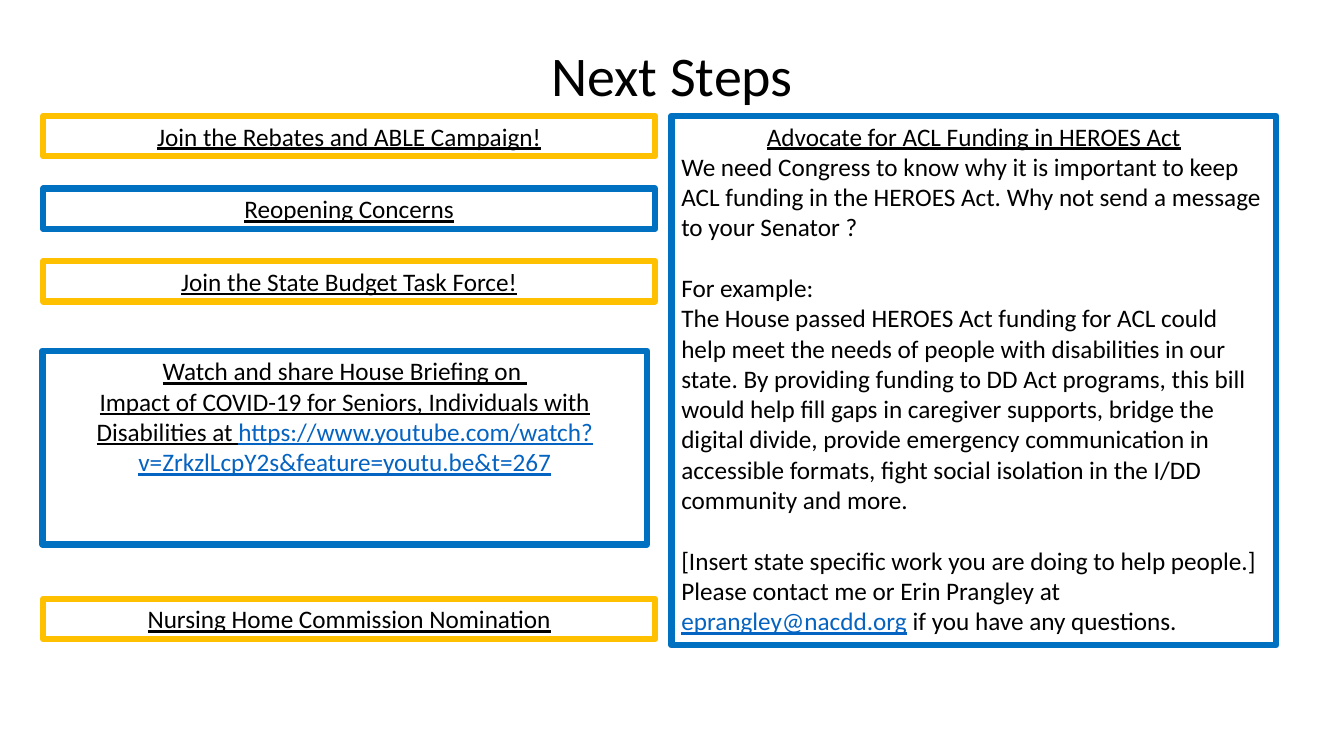
from pptx import Presentation
from pptx.dml.color import RGBColor
from pptx.enum.text import MSO_ANCHOR, PP_ALIGN
from pptx.util import Cm, Pt

COLORS = {"text": "000000", "link": "0563C1", "blue": "0070C0", "gold": "FFC000"}
FONT = "Calibri"
BODY_SIZE = 18
LINE_HEIGHT = Pt(22)


def add_span(para, text, size=BODY_SIZE, color="text", underline=False):
    span = para.add_run()
    span.text = text
    span.font.name = FONT
    span.font.size = Pt(size)
    span.font.underline = underline
    span.font.color.rgb = RGBColor.from_string(COLORS[color])


def add_frame(page, box, color):
    """Add an outlined text box and return its text frame."""
    shape = page.shapes.add_textbox(*(Cm(length) for length in box))
    shape.line.color.rgb = RGBColor.from_string(COLORS[color])
    shape.line.width = Pt(4.5)
    shape.text_frame.word_wrap = True
    return shape.text_frame


def add_heading(frame, text):
    para = frame.paragraphs[0]
    para.alignment = PP_ALIGN.CENTER
    add_span(para, text, underline=True)
    return para


def add_title(page, box, text):
    title = page.shapes.title
    title.left, title.top, title.width, title.height = (Cm(length) for length in box)
    frame = title.text_frame
    frame.vertical_anchor = MSO_ANCHOR.MIDDLE
    para = frame.paragraphs[0]
    para.alignment = PP_ALIGN.CENTER
    add_span(para, text, size=40)


def add_actions(page, box):
    """Stack the one-line actions, leaving room for the briefing."""
    left, top, width, height = box
    row_step = 1.83
    actions = [
        ("Join the Rebates and ABLE Campaign!", "gold", 0),
        ("Reopening Concerns", "blue", row_step),
        ("Join the State Budget Task Force!", "gold", 2 * row_step),
        ("Nursing Home Commission Nomination", "gold", height - 1.02),
    ]
    for text, color, offset in actions:
        add_heading(add_frame(page, (left, top + offset, width, 1.02), color), text)


def add_briefing(page, box):
    para = add_heading(add_frame(page, box, "blue"), "Watch and share House Briefing on ")
    para.add_line_break()
    add_span(para, "Impact of COVID-19 for Seniors, Individuals with Disabilities at ",
             underline=True)
    add_span(para, "https://www.youtube.com/watch?v=ZrkzlLcpY2s&feature=youtu.be&t=267",
             color="link", underline=True)


def add_advocacy(page, box):
    frame = add_frame(page, box, "blue")
    add_heading(frame, "Advocate for ACL Funding in HEROES Act")
    # Each paragraph with the number of lines left free above it
    message = [
        ("We need Congress to know why it is important to keep ACL funding in the "
         "HEROES Act. Why not send a message to your Senator ?", 0),
        ("For example:", 1),
        ("The House passed HEROES Act funding for ACL could help meet the needs of "
         "people with disabilities in our state. By providing funding to DD Act "
         "programs, this bill would help fill gaps in caregiver supports, bridge the "
         "digital divide, provide emergency communication in accessible formats, "
         "fight social isolation in the I/DD community and more.", 0),
        ("[Insert state specific work you are doing to help people.]", 1),
        ("Please contact me or Erin Prangley at ", 0),
    ]
    for text, free_lines in message:
        para = frame.add_paragraph()
        para.space_before = LINE_HEIGHT * free_lines
        add_span(para, text)
    # Contact address ends the last paragraph
    add_span(para, "eprangley@nacdd.org", color="link", underline=True)
    add_span(para, " if you have any questions.")


def main():
    deck = Presentation()
    deck.slide_width, deck.slide_height = Cm(33.87), Cm(19.05)
    page = deck.slides.add_slide(deck.slide_layouts[5])
    add_title(page, (13.51, 0.89, 6.86, 1.96), "Next Steps")
    add_advocacy(page, (16.92, 2.92, 15.24, 13.34))
    add_actions(page, (1.09, 2.92, 15.42, 13.19))
    add_briefing(page, (1.07, 8.84, 15.24, 4.88))
    deck.save("out.pptx")


if __name__ == "__main__":
    main()
